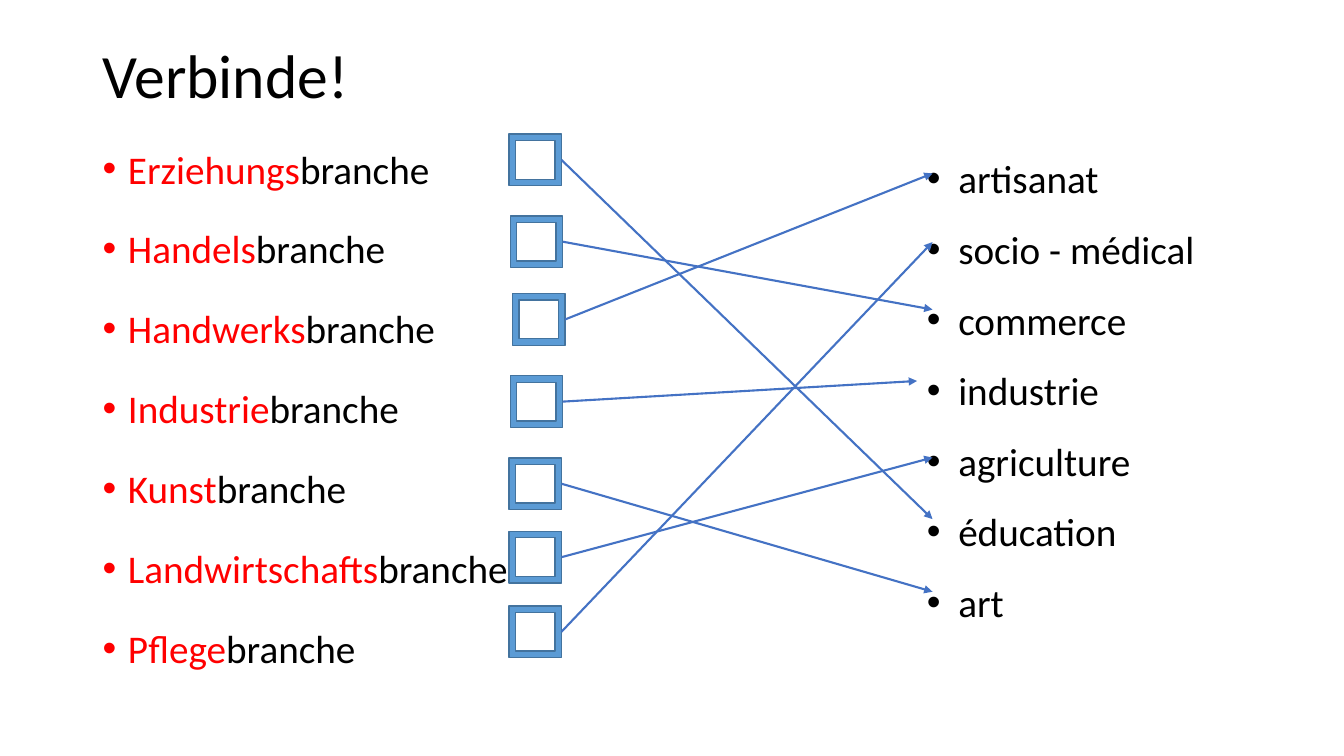
from lxml import etree
from pptx import Presentation
from pptx.dml.color import RGBColor
from pptx.enum import shapes, text
from pptx.oxml.ns import qn
from pptx.util import Cm, Pt

BLACK = RGBColor(0x00, 0x00, 0x00)
RED = RGBColor(0xFF, 0x00, 0x00)
BLUE = RGBColor(0x5B, 0x9B, 0xD5)
EDGE = RGBColor(0x43, 0x73, 0x9E)
ARROW = RGBColor(0x44, 0x72, 0xC4)

STEMS = ["Erziehungs", "Handels", "Handwerks", "Industrie",
         "Kunst", "Landwirtschafts", "Pflege"]
WORDS = ["artisanat", "socio - médical", "commerce", "industrie",
         "agriculture", "éducation", "art"]
LINKS = [
    (12.83, 3.38, 23.5, 13.08),
    (12.86, 5.44, 23.5, 7.8),
    (12.92, 7.4, 23.5, 4.37),
    (12.86, 9.47, 23.11, 9.6),
    (12.83, 11.54, 23.5, 14.91),
    (12.83, 13.39, 23.5, 11.53),
    (12.83, 15.27, 23.5, 6.1),
]


def place(shape, left, top, width, height):
    shape.left, shape.top = Cm(left), Cm(top)
    shape.width, shape.height = Cm(width), Cm(height)


def add_run(para, words, size, color):
    run = para.add_run()
    run.text = words
    run.font.name = "Calibri"
    run.font.size = Pt(size)
    run.font.color.rgb = color


def add_title(slide, words):
    title = slide.shapes.title
    place(title, 2.33, 1.02, 29.21, 3.68)
    frame = title.text_frame
    frame.auto_size = text.MSO_AUTO_SIZE.NONE
    frame.vertical_anchor = text.MSO_ANCHOR.TOP
    para = frame.paragraphs[0]
    para.alignment = text.PP_ALIGN.LEFT
    para.line_spacing = 0.9
    add_run(para, words, 44, BLACK)


def fill_list(frame, items, indent, line, before):
    frame.word_wrap = True
    for num, runs in enumerate(items):
        para = frame.add_paragraph() if num else frame.paragraphs[0]
        para.line_spacing = line
        para.space_before = Pt(before)
        props = para._p.get_or_add_pPr()
        props.set("marL", str(Cm(indent)))
        props.set("indent", str(-Cm(indent)))
        etree.SubElement(props, qn("a:buFont"), typeface="Arial")
        etree.SubElement(props, qn("a:buChar"), char="•")
        for words, color in runs:
            add_run(para, words, 28, color)


def add_box(slide, left, top):
    box = slide.shapes.add_shape(shapes.MSO_SHAPE.FRAME, Cm(left), Cm(top),
                                 Cm(1.32), Cm(1.3))
    box.shadow.inherit = False
    box.fill.solid()
    box.fill.fore_color.rgb = BLUE
    box.line.color.rgb = EDGE
    box.line.width = Pt(1)
    return box


def add_arrow(slide, box, left, top):
    arrow = slide.shapes.add_connector(shapes.MSO_CONNECTOR.STRAIGHT,
                                       0, 0, Cm(left), Cm(top))
    arrow.begin_connect(box, 3)
    arrow.line.color.rgb = ARROW
    arrow.line.width = Pt(1.5)
    etree.SubElement(arrow.line._get_or_add_ln(), qn("a:tailEnd"),
                     type="triangle")
    etree.SubElement(arrow._element.spPr, qn("a:effectLst"))


def main():
    deck = Presentation()
    deck.slide_width, deck.slide_height = Cm(33.87), Cm(19.05)
    slide = deck.slides.add_slide(deck.slide_layouts[1])
    add_title(slide, "Verbinde!")

    body = slide.placeholders[1]
    place(body, 2.33, 3.05, 11.1, 14.12)
    body.text_frame.auto_size = text.MSO_AUTO_SIZE.NONE
    body.text_frame.vertical_anchor = text.MSO_ANCHOR.TOP
    fill_list(body.text_frame,
              [[(stem, RED), ("branche", BLACK)] for stem in STEMS],
              0.64, 1.4, 10)

    boxes = [add_box(slide, left, top) for left, top, _, _ in LINKS]

    label = slide.shapes.add_textbox(Cm(23.11), Cm(3.18), Cm(15.09), Cm(12.83))
    fill_list(label.text_frame, [[(word, BLACK)] for word in WORDS],
              0.79, 1.5, 0)
    label.text_frame.auto_size = text.MSO_AUTO_SIZE.SHAPE_TO_FIT_TEXT

    for box, (_, _, left, top) in zip(boxes, LINKS):
        add_arrow(slide, box, left, top)
    deck.save("out.pptx")


if __name__ == "__main__":
    main()
